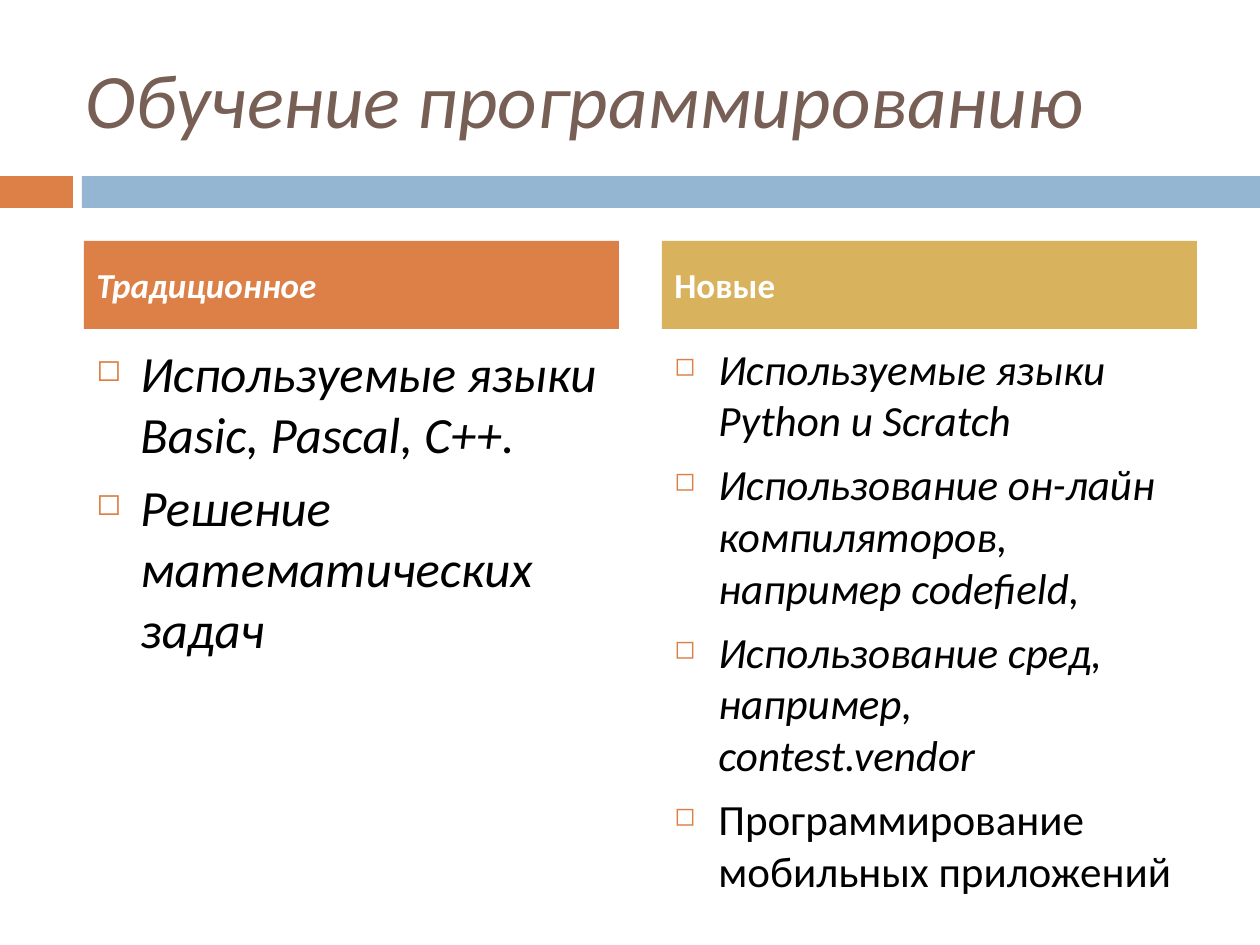
from dataclasses import dataclass
from pptx import Presentation as Deck
from pptx.dml.color import RGBColor as Color
from pptx.enum.shapes import MSO_SHAPE as Kind
from pptx.enum.text import MSO_ANCHOR as Anchor, PP_ALIGN as Align
from pptx.oxml import parse_xml as make
from pptx.oxml.ns import nsdecls
from pptx.util import Emu, Pt


@dataclass(frozen=True)
class Theme:
    font: str = "Calibri"
    brown: str = "775F55"
    rust: str = "DD8047"
    blue: str = "94B6D2"
    gold: str = "D8B25C"
    black: str = "000000"
    white: str = "FFFFFF"
    title: float = 44
    head: float = 20
    large: float = 29
    small: float = 24.6
    gap: float = 7


THEME = Theme()
SCALE = 914400 / 126
INDENT = 44
COLS = (84, 662)
WIDTH = 535

LEFT = [
    ("Используемые языки Basic, Pascal, С++.", True),
    ("Решение математических задач", True),
]
RIGHT = [
    ("Используемые языки Python и Scratch", True),
    ("Использование он-лайн компиляторов, например codefield,", True),
    ("Использование сред, например,\vcontest.vendor", True),
    ("Программирование мобильных приложений", False),
]


def px(num):
    return Emu(round(num * SCALE))


def put(item, form):
    for name, val in form.items():
        setattr(item, name, val)


def style(para, size, color, bold=False, slant=False):
    put(para.font, {"name": THEME.font, "size": Pt(size), "bold": bold, "italic": slant})
    para.font.color.rgb = Color.from_string(color)


def bar(slide, box, color):
    shape = slide.shapes.add_shape(Kind.RECTANGLE, *map(px, box))
    shape.shadow.inherit = False
    shape.fill.solid()
    shape.fill.fore_color.rgb = Color.from_string(color)
    shape.line.fill.background()
    return shape


def write(shape, text, anchor, size, color, **face):
    frame = shape.text_frame
    put(frame, {"word_wrap": True, "vertical_anchor": anchor})
    para = frame.paragraphs[0]
    put(para, {"text": text, "alignment": Align.LEFT})
    style(para, size, color, **face)
    return para


def head(slide, left, text, color, slant):
    shape = bar(slide, (left, 241, WIDTH, 88), color)
    para = write(shape, text, Anchor.MIDDLE, THEME.head, THEME.white, bold=True, slant=slant)
    para.space_before = Pt(THEME.gap)


def mark(para):
    props = para._p.get_or_add_pPr()
    props.set("marL", str(px(INDENT)))
    props.set("indent", str(-px(INDENT)))
    for body in (
        f'<a:buClr {nsdecls("a")}><a:srgbClr val="{THEME.rust}"/></a:buClr>',
        f'<a:buSzPct {nsdecls("a")} val="60000"/>',
        f'<a:buChar {nsdecls("a")} char="◻"/>',
    ):
        props.insert_element_before(make(body), "a:tabLst", "a:defRPr", "a:extLst")


def points(slide, left, items, size):
    box = slide.shapes.add_textbox(*map(px, (left, 336, WIDTH, 494)))
    frame = box.text_frame
    frame.word_wrap = True
    for num, (text, slant) in enumerate(items):
        para = frame.add_paragraph() if num else frame.paragraphs[0]
        put(para, {"text": text, "space_before": Pt(THEME.gap)})
        style(para, size, THEME.black, slant=slant)
        mark(para)


def main():
    deck = Deck()
    put(deck, {"slide_width": px(1260), "slide_height": px(945)})
    slide = deck.slides.add_slide(deck.slide_layouts[6])
    bar(slide, (0, 176, 73, 32), THEME.rust)
    bar(slide, (82, 176, 1178, 32), THEME.blue)
    title = slide.shapes.add_textbox(*map(px, (73, 38, 1124, 120)))
    write(title, "Обучение программированию", Anchor.MIDDLE, THEME.title, THEME.brown, slant=True)
    points(slide, COLS[0], LEFT, THEME.large)
    points(slide, COLS[1], RIGHT, THEME.small)
    head(slide, COLS[0], "Традиционное", THEME.rust, True)
    head(slide, COLS[1], "Новые", THEME.gold, False)
    deck.save("out.pptx")


if __name__ == "__main__":
    main()
